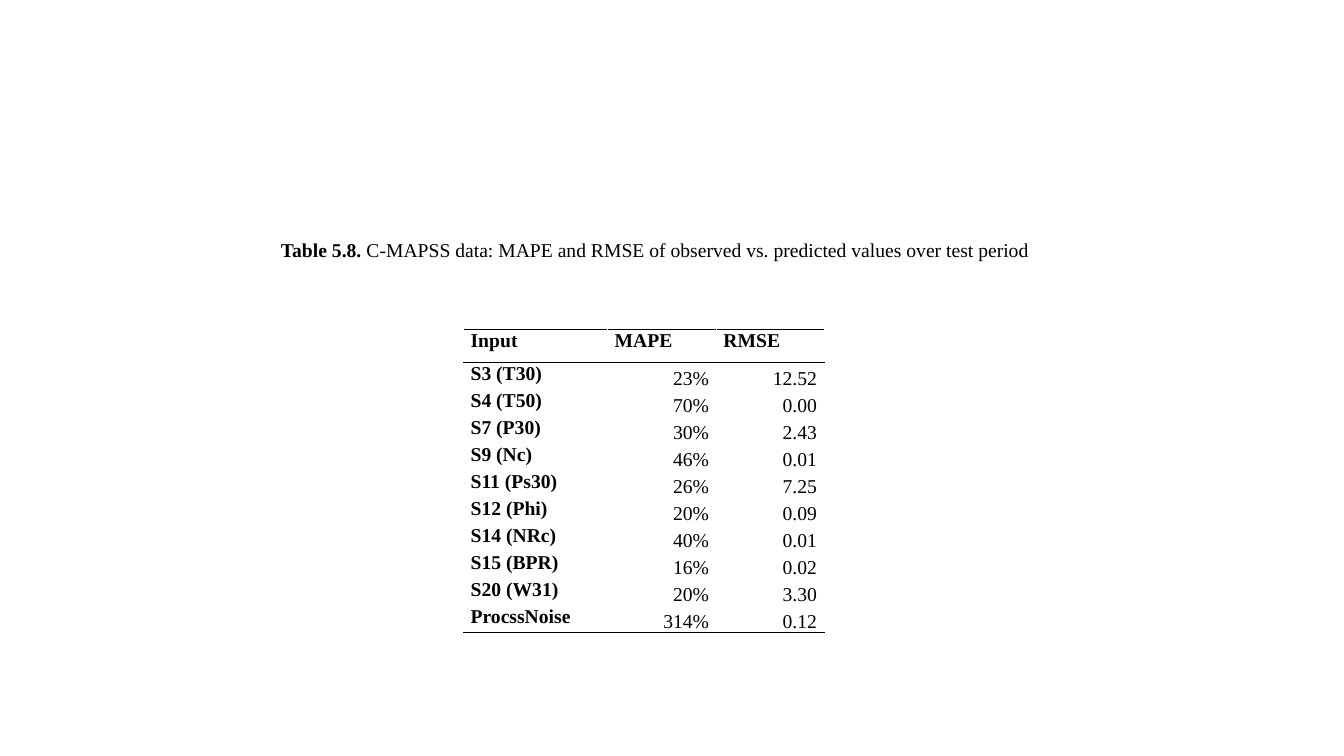
from lxml.etree import SubElement as Sub
from pptx import Presentation
from pptx.dml.color import RGBColor
from pptx.enum.text import MSO_ANCHOR as Anchor, MSO_AUTO_SIZE as Fit, PP_ALIGN as Align
from pptx.oxml.ns import qn
from pptx.util import Cm, Pt


def style(font, bold=None):
    font.name = "Times New Roman"
    font.size = Pt(14)
    font.bold = bold
    font.color.rgb = RGBColor.from_string("000000")


def border(cell, side, color):
    line = Sub(cell._tc.get_or_add_tcPr(), qn(f"a:ln{side}"), w=str(Pt(1)))
    Sub(Sub(line, qn("a:solidFill")), qn("a:srgbClr"), val=color)


deck = Presentation()
deck.slide_width, deck.slide_height = Cm(33.87), Cm(19.05)
slide = deck.slides.add_slide(deck.slide_layouts[6])

rows = [
    ("Input", "MAPE", "RMSE"),
    ("S3 (T30)", "23%", "12.52"),
    ("S4 (T50)", "70%", "0.00"),
    ("S7 (P30)", "30%", "2.43"),
    ("S9 (Nc)", "46%", "0.01"),
    ("S11 (Ps30)", "26%", "7.25"),
    ("S12 (Phi)", "20%", "0.09"),
    ("S14 (NRc)", "40%", "0.01"),
    ("S15 (BPR)", "16%", "0.02"),
    ("S20 (W31)", "20%", "3.30"),
    ("ProcssNoise", "314%", "0.12"),
]
widths = [3.63, 2.74, 2.72]
last = len(rows) - 1

table = slide.shapes.add_table(
    len(rows), len(widths), Cm(11.68), Cm(8.31), Cm(sum(widths)), Cm(7.63)
).table
table.horz_banding = False
for col, width in zip(table.columns, widths):
    col.width = Cm(width)

for r, row in enumerate(rows):
    table.rows[r].height = Cm(0.68 if r else 0.83)
    for c, text in enumerate(row):
        cell = table.cell(r, c)
        cell.margin_left = cell.margin_right = Cm(0.18)
        cell.margin_top = cell.margin_bottom = 0
        label = r == 0 or c == 0
        cell.vertical_anchor = Anchor.TOP if label else Anchor.BOTTOM
        cell.text = text
        para = cell.text_frame.paragraphs[0]
        para.alignment = Align.LEFT if label else Align.RIGHT
        para.space_before = para.space_after = Pt(3)
        style(para.font, label)
        border(cell, "L", "FFFFFF")
        border(cell, "R", "FFFFFF")
        border(cell, "T", "000000" if r < 2 else "FFFFFF")
        border(cell, "B", "000000" if r in (0, last) else "FFFFFF")
        cell.fill.background()

title = slide.shapes.add_textbox(Cm(6.83), Cm(5.87), Cm(19.53), Cm(0.86))
frame = title.text_frame
frame.word_wrap = False
frame.auto_size = Fit.SHAPE_TO_FIT_TEXT
frame.vertical_anchor = Anchor.MIDDLE
para = frame.paragraphs[0]
style(para.font)
for text, bold in [
    ("Table 5.8.", True),
    (" C-MAPSS data: MAPE and RMSE of observed vs. predicted values over test period", False),
]:
    run = para.add_run()
    run.text = text
    run.font.bold = bold

deck.save("out.pptx")
